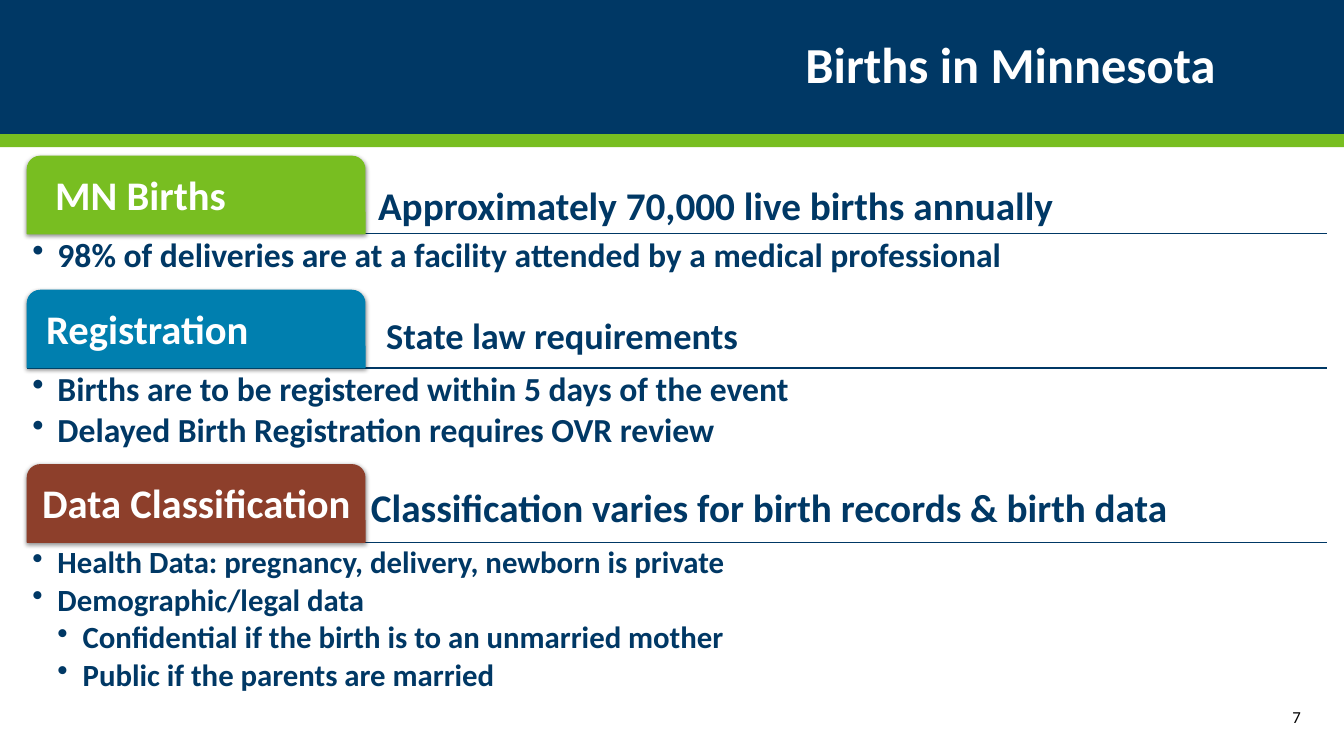
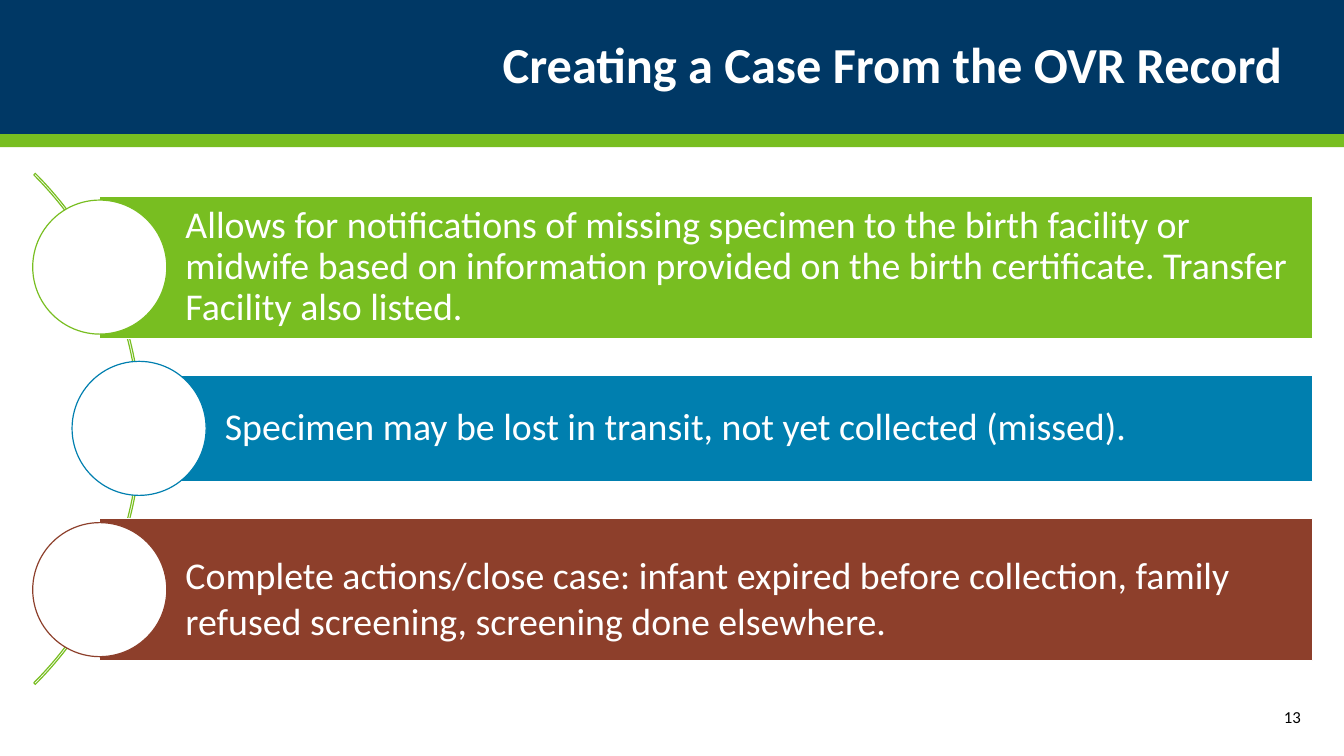
from lxml.etree import SubElement
from pptx import Presentation
from pptx.dml.color import RGBColor
from pptx.enum.shapes import MSO_CONNECTOR, MSO_SHAPE
from pptx.enum.text import MSO_ANCHOR, PP_ALIGN
from pptx.oxml.ns import qn
from pptx.util import Inches, Pt

COLORS = {
    "navy": "003865",
    "green": "78BE21",
    "blue": "007FAF",
    "rust": "8D3F2B",
    "white": "FFFFFF",
    "black": "000000",
}
FONT = "Calibri"
SLIDE_WIDTH, SLIDE_HEIGHT = 13.33, 7.5


def rgb(name):
    return RGBColor.from_string(COLORS[name])


class Deck:
    """Holds the shared style and the current slide."""

    def __init__(self):
        self.presentation = Presentation()
        self.presentation.slide_width = Inches(SLIDE_WIDTH)
        self.presentation.slide_height = Inches(SLIDE_HEIGHT)
        self.slide = None

    def add_slide(self, title, number, title_inset):
        layout = self.presentation.slide_layouts[5]
        self.slide = self.presentation.slides.add_slide(layout)
        # Header bands, kept behind the title
        heading = self.slide.shapes.title
        for top, height, color in ((0, 1.33, "navy"), (1.33, 0.13, "green")):
            band = self.shape(MSO_SHAPE.RECTANGLE, 0, top, SLIDE_WIDTH, height, color)
            heading.element.addprevious(band.element)
        # Title
        heading.left, heading.top = Inches(0), Inches(0)
        heading.width, heading.height = Inches(13), Inches(1.33)
        self.fill_text(heading, [title], 36, "white", bold=True, align=PP_ALIGN.RIGHT,
                       insets=(0, 0.05, title_inset, 0.05))
        # Slide number
        self.text(11.4, 6.92, 1.6, 0.4, [number], 12, "black", align=PP_ALIGN.RIGHT,
                  insets=(0.1, 0.05, 0.1, 0.05))

    def shape(self, kind, left, top, width, height, fill=None, line=None, line_width=0.85):
        shape = self.slide.shapes.add_shape(
            kind, Inches(left), Inches(top), Inches(width), Inches(height))
        shape.shadow.inherit = False
        if fill:
            shape.fill.solid()
            shape.fill.fore_color.rgb = rgb(fill)
        else:
            shape.fill.background()
        if line:
            shape.line.color.rgb = rgb(line)
            shape.line.width = Pt(line_width)
        else:
            shape.line.fill.background()
        return shape

    def drop_shadow(self, shape):
        effects = shape.element.spPr.find(qn("a:effectLst"))
        shadow = SubElement(effects, qn("a:outerShdw"), blurRad=str(Pt(3.5)),
                            dist=str(Pt(1.1)), dir="5400000", rotWithShape="0")
        color = SubElement(shadow, qn("a:srgbClr"), val=COLORS["black"])
        SubElement(color, qn("a:alpha"), val="45000")

    def rule(self, left, right, y):
        line = self.slide.shapes.add_connector(
            MSO_CONNECTOR.STRAIGHT, Inches(left), Inches(y), Inches(right), Inches(y))
        line.line.color.rgb = rgb("navy")
        line.line.width = Pt(0.85)
        SubElement(line.element.spPr, qn("a:effectLst"))

    def text(self, left, top, width, height, lines, size, color, **style):
        box = self.slide.shapes.add_textbox(
            Inches(left), Inches(top), Inches(width), Inches(height))
        self.fill_text(box, lines, size, color, **style)

    def fill_text(self, shape, lines, size, color, bold=False, align=PP_ALIGN.LEFT,
                  anchor=MSO_ANCHOR.MIDDLE, insets=(0.05,) * 4, spacing=0.9, bullets=False):
        """Fill a shape with lines; a bulleted line is a (level, text) pair."""
        frame = shape.text_frame
        frame.word_wrap = True
        frame.vertical_anchor = anchor
        (frame.margin_left, frame.margin_top,
         frame.margin_right, frame.margin_bottom) = map(Inches, insets)
        for index, line in enumerate(lines):
            paragraph = frame.paragraphs[0] if index == 0 else frame.add_paragraph()
            if bullets:
                level, line = line
                self.bullet(paragraph, level)
            paragraph.text = line
            paragraph.alignment = align
            paragraph.line_spacing = spacing
            paragraph.font.name = FONT
            paragraph.font.size = Pt(size)
            paragraph.font.bold = bold
            paragraph.font.color.rgb = rgb(color)

    def bullet(self, paragraph, level):
        paragraph.level = level
        paragraph.space_after = Pt(3)
        properties = paragraph._p.get_or_add_pPr()
        properties.set("marL", str(Inches(0.25 * level)))
        properties.set("indent", str(Inches(-0.25)))
        SubElement(properties, qn("a:buChar"), char="•")

    def section(self, bottom, color, label, label_inset, heading, heading_size,
                heading_left, heading_gap, bullets, bullet_size):
        """A tab and heading on a rule, with bullets below it."""
        left, right, tab_width, tab_height = 0.27, 13.16, 3.35, 0.77
        self.rule(left, right, bottom)
        tab = self.shape(MSO_SHAPE.ROUND_2_SAME_RECTANGLE, left, bottom - tab_height,
                         tab_width, tab_height, color, color, 0.75)
        self.drop_shadow(tab)
        self.fill_text(tab, [label], 29, "white", bold=True,
                       insets=(label_inset, 0.06, 0, 0.06))
        self.text(heading_left, bottom - tab_height, right - heading_left,
                  tab_height - heading_gap, [heading], heading_size, "navy",
                  bold=True, anchor=MSO_ANCHOR.BOTTOM)
        self.text(left, bottom, right - left, 0.13 + 0.4 * len(bullets), bullets,
                  bullet_size, "navy", bold=True, anchor=MSO_ANCHOR.TOP, bullets=True)

    def step(self, middle, left, height, color, text, top_inset=0.07, spacing=0.9):
        """A bar of text with a circle over its left end."""
        bar = self.shape(MSO_SHAPE.RECTANGLE, left, middle - height / 2,
                         13.02 - left, height, color, "white")
        self.fill_text(bar, [text], 27, "white", spacing=spacing,
                       insets=(0.85, top_inset, 0.07, 0.07))
        diameter = 1.33
        self.shape(MSO_SHAPE.OVAL, left - diameter / 2, middle - diameter / 2,
                   diameter, diameter, "white", color)


def main():
    deck = Deck()

    # Births in Minnesota
    deck.add_slide("Births in Minnesota", "7", title_inset=0.94)
    deck.section(2.32, "green", "MN Births", 0.24,
                 "Approximately 70,000 live births annually", 28, 3.7, 0,
                 [(1, "98% of deliveries are at a facility attended by a medical professional")],
                 24)
    deck.section(3.65, "blue", "Registration", 0.15,
                 "State law requirements", 26, 3.78, 0.06,
                 [(1, "Births are to be registered within 5 days of the event"),
                  (1, "Delayed Birth Registration requires OVR review")], 24)
    deck.section(5.38, "rust", "Data Classification", 0.11,
                 "Classification varies for birth records & birth data", 28, 3.63, 0.06,
                 [(1, "Health Data: pregnancy, delivery, newborn is private"),
                  (1, "Demographic/legal data"),
                  (2, "Confidential if the birth is to an unmarried mother"),
                  (2, "Public if the parents are married")], 22)

    # Creating a case
    deck.add_slide("Creating a Case From the OVR Record", "13", title_inset=0.28)
    center, pitch = 4.25, 1.6
    arc = deck.shape(MSO_SHAPE.BLOCK_ARC, -5.77, 0.67, 7.17, 7.17, line="green")
    for index, value in enumerate((189, 27, 0.003)):
        arc.adjustments[index] = value
    deck.step(center - pitch, 0.99, 1.41, "green",
              "Allows for notifications of missing specimen to the birth facility or "
              "midwife based on information provided on the birth certificate. "
              "Transfer Facility also listed.")
    deck.step(center, 1.38, 1.06, "blue",
              "Specimen may be lost in transit, not yet collected (missed).")
    deck.step(center + pitch, 0.99, 1.41, "rust",
              "Complete actions/close case: infant expired before collection, family "
              "refused screening, screening done elsewhere.", top_inset=0.22, spacing=1.0)

    deck.presentation.save("out.pptx")


if __name__ == "__main__":
    main()
